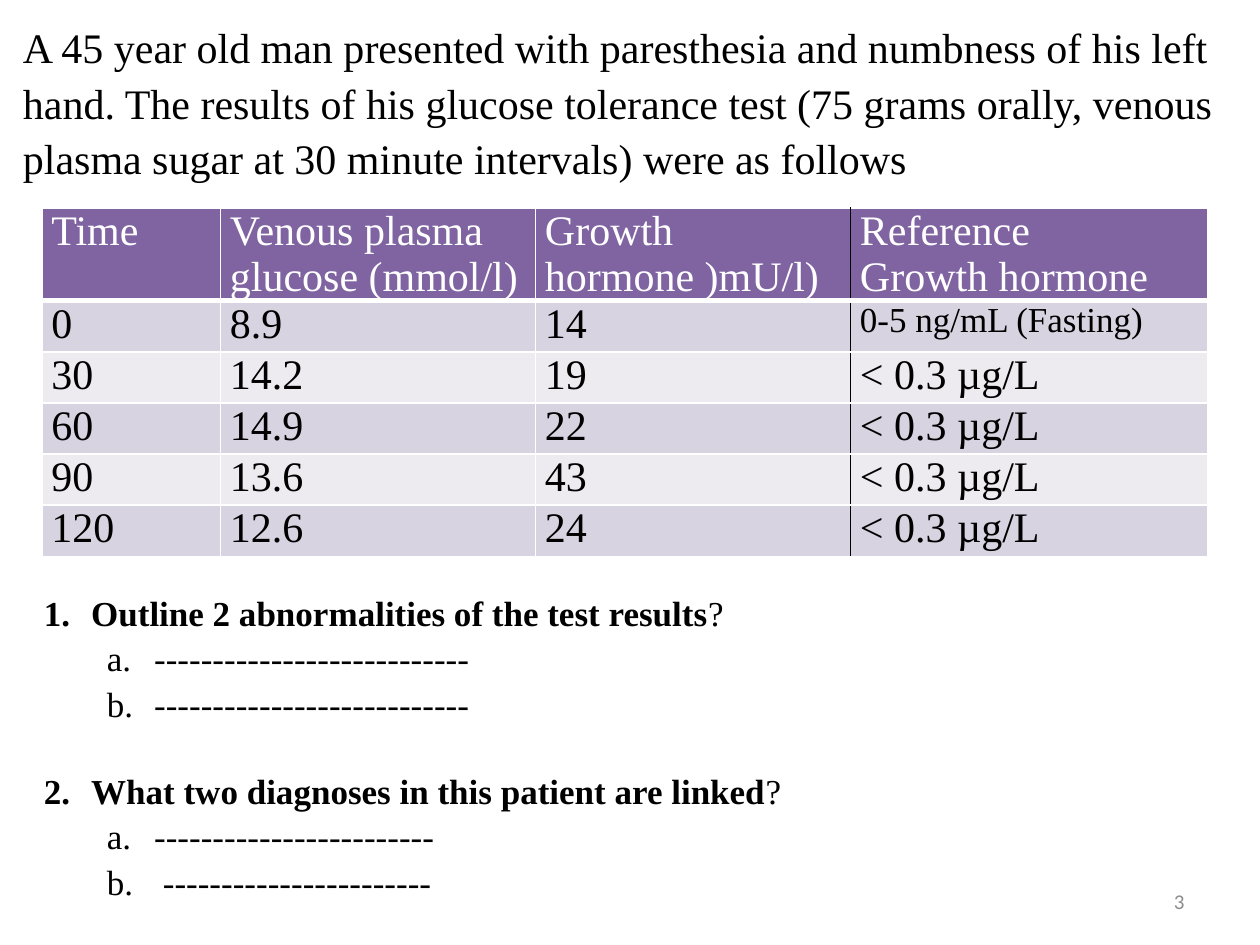
from dataclasses import dataclass

from pptx import Presentation
from pptx.dml.color import RGBColor as RGB
from pptx.enum.text import MSO_ANCHOR as Anchor, PP_ALIGN as Align
from pptx.oxml.ns import qn
from pptx.util import Pt
from lxml.etree import SubElement


@dataclass(frozen=True)
class Theme:
    serif: str = "Times New Roman"
    sans: str = "Calibri"
    black: str = "000000"
    white: str = "FFFFFF"
    gray: str = "8C8C8C"
    purple: str = "8064A2"
    bands: tuple = ("D8D3E0", "EDEAF0")
    large: int = 24
    medium: int = 20
    small: int = 12


THEME = Theme()

INTRO = (
    "A 45 year old man presented with paresthesia and numbness of his left hand. "
    "The results of his glucose tolerance test (75 grams orally, venous plasma sugar "
    "at 30 minute intervals) were as follows"
)
HEADERS = [
    "Time",
    "Venous plasma\nglucose (mmol/l)",
    "Growth\nhormone )mU/l)",
    "Reference\nGrowth hormone",
]
FASTING = "0-5 ng/mL (Fasting)"
LATER = "< 0.3 µg/L"
RESULTS = [
    ["0", "8.9", "14", FASTING],
    ["30", "14.2", "19", LATER],
    ["60", "14.9", "22", LATER],
    ["90", "13.6", "43", LATER],
    ["120", "12.6", "24", LATER],
]
QUESTIONS = [
    ("Outline 2 abnormalities of the test results", ["-" * 27, "-" * 27]),
    ("What two diagnoses in this patient are linked", ["-" * 24, " " + "-" * 23]),
]


def write(paragraph, text, *, size=THEME.large, color=THEME.black, font=THEME.serif,
          bold=False, align=Align.LEFT, spacing=None):
    """Add one formatted run to a paragraph."""
    run = paragraph.add_run()
    run.text = text
    run.font.name, run.font.size, run.font.bold = font, Pt(size), bold
    run.font.color.rgb = RGB.from_string(color)
    paragraph.alignment = align
    if spacing:
        paragraph.line_spacing = spacing


def next_paragraph(frame):
    """Return the empty first paragraph, or a new one."""
    first = frame.paragraphs[0]
    return frame.add_paragraph() if first.runs else first


def add_text_frame(slide, left, top, width, height, anchor=Anchor.TOP):
    box = slide.shapes.add_textbox(Pt(left), Pt(top), Pt(width), Pt(height))
    box.text_frame.word_wrap = True
    box.text_frame.vertical_anchor = anchor
    return box.text_frame


def number(paragraph, style, left, start=1):
    """Give a paragraph an automatic number with a hanging indent."""
    props = paragraph._p.get_or_add_pPr()
    props.set("marL", str(Pt(left)))
    props.set("indent", str(Pt(-27)))
    numbering = SubElement(props, qn("a:buAutoNum"), type=style)
    if start > 1:
        numbering.set("startAt", str(start))


def set_borders(cell, **sides):
    """Draw cell borders; each side is a (colour, width) pair."""
    props = cell._tc.get_or_add_tcPr()
    for side in "LRTB":
        color, width = sides[side]
        line = SubElement(props, qn(f"a:ln{side}"), w=str(Pt(width)))
        fill = SubElement(line, qn("a:solidFill"))
        SubElement(fill, qn("a:srgbClr"), val=color)


def add_results_table(slide):
    rows = [HEADERS] + RESULTS
    widths = [102, 180, 180, 204]
    heights = [53] + [29.2] * len(RESULTS)
    table = slide.shapes.add_table(
        len(rows), len(widths), Pt(24), Pt(118.8), Pt(sum(widths)), Pt(sum(heights))
    ).table
    for column, width in zip(table.columns, widths):
        column.width = Pt(width)
    thin, dark = (THEME.white, 1), (THEME.black, 1)
    reference = len(widths) - 1

    for r, (values, height) in enumerate(zip(rows, heights)):
        table.rows[r].height = Pt(height)
        header = r == 0
        for c, value in enumerate(values):
            cell = table.cell(r, c)
            cell.margin_left = cell.margin_right = Pt(5.4)
            cell.margin_top = cell.margin_bottom = 0
            # A dark rule sets off the reference column
            set_borders(cell, L=dark if c == reference else thin,
                        R=dark if c == reference - 1 else thin,
                        T=thin, B=(THEME.white, 3) if header else thin)
            cell.fill.solid()
            cell.fill.fore_color.rgb = RGB.from_string(
                THEME.purple if header else THEME.bands[(r - 1) % 2])
            for line in value.split("\n"):
                write(next_paragraph(cell.text_frame), line,
                      size=THEME.medium if value == FASTING else THEME.large,
                      color=THEME.white if header else THEME.black)


def add_questions(slide):
    frame = add_text_frame(slide, 18, 332.6, 684, 201)
    style = dict(size=THEME.medium, spacing=1.08)
    for index, (question, answers) in enumerate(QUESTIONS, start=1):
        heading = next_paragraph(frame)
        number(heading, "arabicPeriod", 27, start=index)
        if index > 1:
            heading.space_before = Pt(24)
        write(heading, question, bold=True, **style)
        write(heading, "?", **style)
        for answer in answers:
            blank = next_paragraph(frame)
            blank.level = 1
            number(blank, "alphaLcPeriod", 63)
            write(blank, answer, **style)


def main():
    deck = Presentation()
    deck.slide_width, deck.slide_height = Pt(720), Pt(540)
    slide = deck.slides.add_slide(deck.slide_layouts[6])

    # Test results
    add_results_table(slide)

    # Slide number
    page = add_text_frame(slide, 516, 500.5, 168, 28.8, Anchor.MIDDLE)
    write(page.paragraphs[0], "3", size=THEME.small, color=THEME.gray,
          font=THEME.sans, align=Align.RIGHT)

    # Case description
    case = add_text_frame(slide, 6, 6, 708, 94.5)
    write(case.paragraphs[0], INTRO, spacing=1.1)

    # Questions with answer lines
    add_questions(slide)

    deck.save("out.pptx")


if __name__ == "__main__":
    main()
